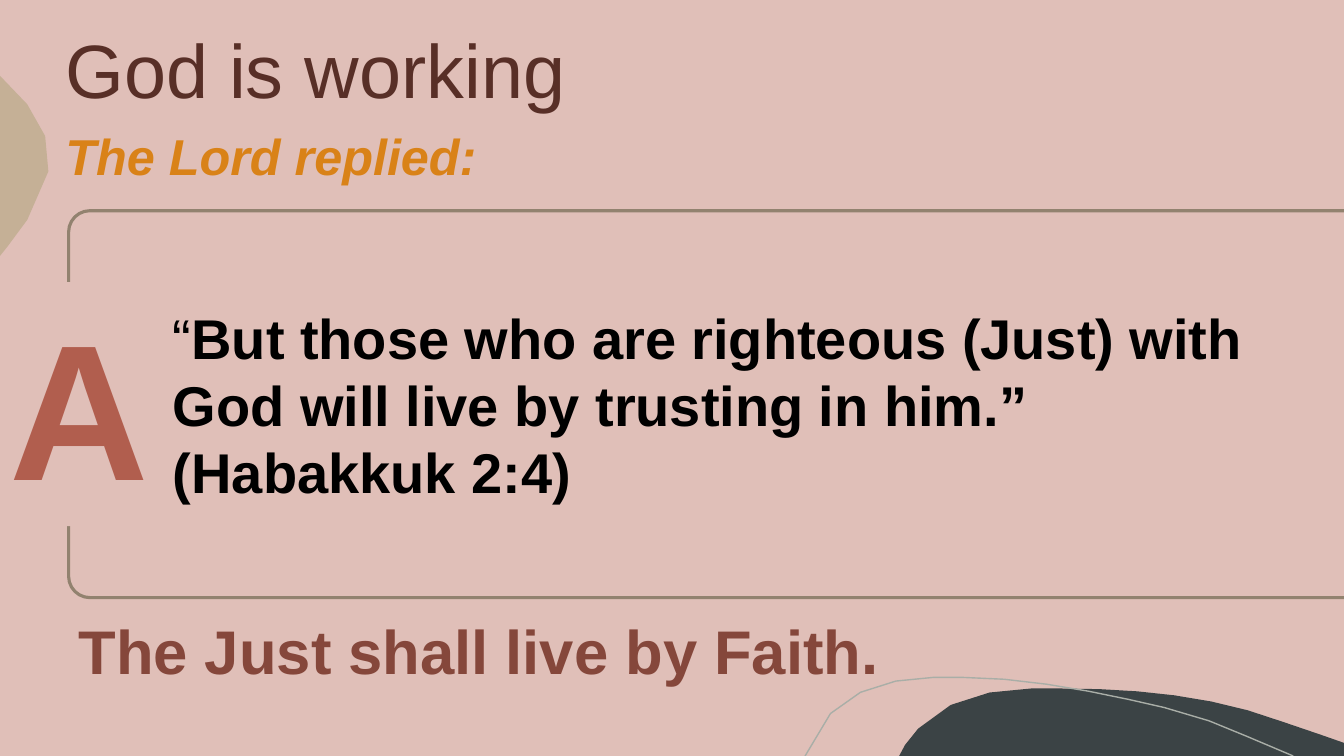
import math

from pptx import Presentation
from pptx import util as u
from pptx.dml.color import RGBColor
from pptx.enum import shapes, text

ROSE = RGBColor(0xE0, 0xBF, 0xB8)
SLATE = RGBColor(0x3B, 0x43, 0x45)
SAND = RGBColor(0xC5, 0xB0, 0x96)
SAGE = RGBColor(0xA9, 0xAE, 0xA7)
TAUPE = RGBColor(0x92, 0x82, 0x6F)
BROWN = RGBColor(0x58, 0x2F, 0x27)
ORANGE = RGBColor(0xD9, 0x82, 0x18)
BRICK = RGBColor(0xB1, 0x5E, 0x4E)
RUST = RGBColor(0x85, 0x47, 0x3B)
BLACK = RGBColor(0, 0, 0)

FONT = "Arial"
TOP = text.MSO_ANCHOR.TOP
MIDDLE = text.MSO_ANCHOR.MIDDLE

# Outlines in cm: a pair is a straight step, six numbers are a Bézier step.
HILL = [
    (26.77, 17.35),
    (28.65, 17.35, 30.58, 17.53, 32.33, 18.19),
    (32.66, 18.29, 32.97, 18.42, 33.3, 18.52),
    (33.87, 18.72), (33.87, 19.05), (22.66, 19.05), (22.81, 18.77),
    (22.91, 18.62, 23.01, 18.49, 23.14, 18.36),
    (23.85, 17.6, 24.94, 17.37, 25.98, 17.35),
]
PEBBLE = [
    (0, 1.91),
    (0.76, 2.59, 1.37, 3.38, 1.22, 4.32),
    (1.17, 4.75, 0.94, 5.16, 0.69, 5.54),
    (0.61, 5.69, 0.43, 5.92, 0.2, 6.2),
    (0, 6.45),
]
HILL_LINE = [
    (20.29, 19.05),
    (20.47, 18.62, 20.68, 18.24, 20.93, 17.98),
    (21.59, 17.3, 22.58, 17.09, 23.52, 17.07),
    (24.26, 17.07),
    (25.96, 17.07, 27.94, 17.5, 29.34, 17.83),
    (30.71, 18.16, 31.14, 18.47, 32.59, 19.05),
]


def trace(outline):
    """Turn an outline into points, about one per cm along each Bézier step."""
    points = [outline[0]]
    for step in outline[1:]:
        if len(step) == 2:
            points.append(step)
            continue
        corners = [points[-1], step[:2], step[2:4], step[4:]]
        count = max(1, round(math.dist(corners[0], corners[3])))
        for index in range(1, count + 1):
            t = index / count
            weights = ((1 - t) ** 3, 3 * t * (1 - t) ** 2,
                       3 * t ** 2 * (1 - t), t ** 3)
            points.append(tuple(
                sum(weight * corner[axis]
                    for weight, corner in zip(weights, corners))
                for axis in (0, 1)))
    return [(u.Cm(x), u.Cm(y)) for x, y in points]


def paint(shape, fill=None, line=None, width=1):
    shape.shadow.inherit = False
    if fill is None:
        shape.fill.background()
    else:
        shape.fill.solid()
        shape.fill.fore_color.rgb = fill
    if line is None:
        shape.line.fill.background()
    else:
        shape.line.color.rgb = line
        shape.line.width = u.Pt(width)


def add_outline(slide, outline, closed=True, **look):
    points = trace(outline)
    builder = slide.shapes.build_freeform(*points[0])
    builder.add_line_segments(points[1:], close=closed)
    paint(builder.convert_to_shape(), **look)


def add_block(slide, kind, box, **look):
    shape = slide.shapes.add_shape(kind, *map(u.Cm, box))
    paint(shape, **look)
    return shape


def add_text_box(slide, box):
    return slide.shapes.add_textbox(*map(u.Cm, box))


def write(shape, paragraphs, size, color, bold=False, italic=False,
          spacing=None, anchor=TOP, wrap=True):
    """Fill a shape; each paragraph is a string or a list of (wording, bold) runs."""
    frame = shape.text_frame
    frame.word_wrap = wrap
    frame.vertical_anchor = anchor
    for index, runs in enumerate(paragraphs):
        paragraph = frame.add_paragraph() if index else frame.paragraphs[0]
        paragraph.alignment = text.PP_ALIGN.LEFT
        if spacing:
            paragraph.line_spacing = spacing
        if isinstance(runs, str):
            runs = [(runs, bold)]
        for wording, is_bold in runs:
            run = paragraph.add_run()
            run.text = wording
            font = run.font
            font.name, font.size = FONT, u.Pt(size)
            font.bold, font.italic = is_bold, italic
            font.color.rgb = color


def main():
    presentation = Presentation()
    presentation.slide_width = u.Cm(33.87)
    presentation.slide_height = u.Cm(19.05)
    slide = presentation.slides.add_slide(presentation.slide_layouts[6])
    slide.background.fill.solid()
    slide.background.fill.fore_color.rgb = ROSE

    add_outline(slide, HILL, fill=SLATE)
    add_outline(slide, PEBBLE, fill=SAND)
    add_outline(slide, HILL_LINE, closed=False, line=SAGE)

    title = add_text_box(slide, (1.4, 0.74, 31.9, 2.26))
    write(title, ["God is working"], 54, BROWN, spacing=0.9, anchor=MIDDLE)
    subtitle = add_text_box(slide, (1.4, 3.02, 31.9, 1.8))
    write(subtitle, ["The Lord replied:"], 36, ORANGE, bold=True, italic=True)

    verse_frame = add_block(slide, shapes.MSO_SHAPE.ROUNDED_RECTANGLE,
                            (1.73, 5.31, 33.2, 9.75), line=TAUPE, width=2.25)
    verse_frame.adjustments[0] = 0.055
    letter = add_block(slide, shapes.MSO_SHAPE.RECTANGLE,
                       (0, 7.11, 4.06, 6.15), fill=ROSE)
    write(letter, ["A"], 138, BRICK, bold=True, wrap=False)

    verse = add_text_box(slide, (4.11, 7.49, 29.75, 5.38))
    write(verse, [
        [("“", False),
         ("But those who are righteous (Just) with God will live by "
          "trusting in him.”", True)],
        "(Habakkuk 2:4)",
    ], 40, BLACK, bold=True, anchor=MIDDLE)
    lesson = add_text_box(slide, (1.73, 15.32, 21.79, 2.13))
    write(lesson, ["The Just shall live by Faith."], 44, RUST, bold=True)

    presentation.save("out.pptx")


if __name__ == "__main__":
    main()
